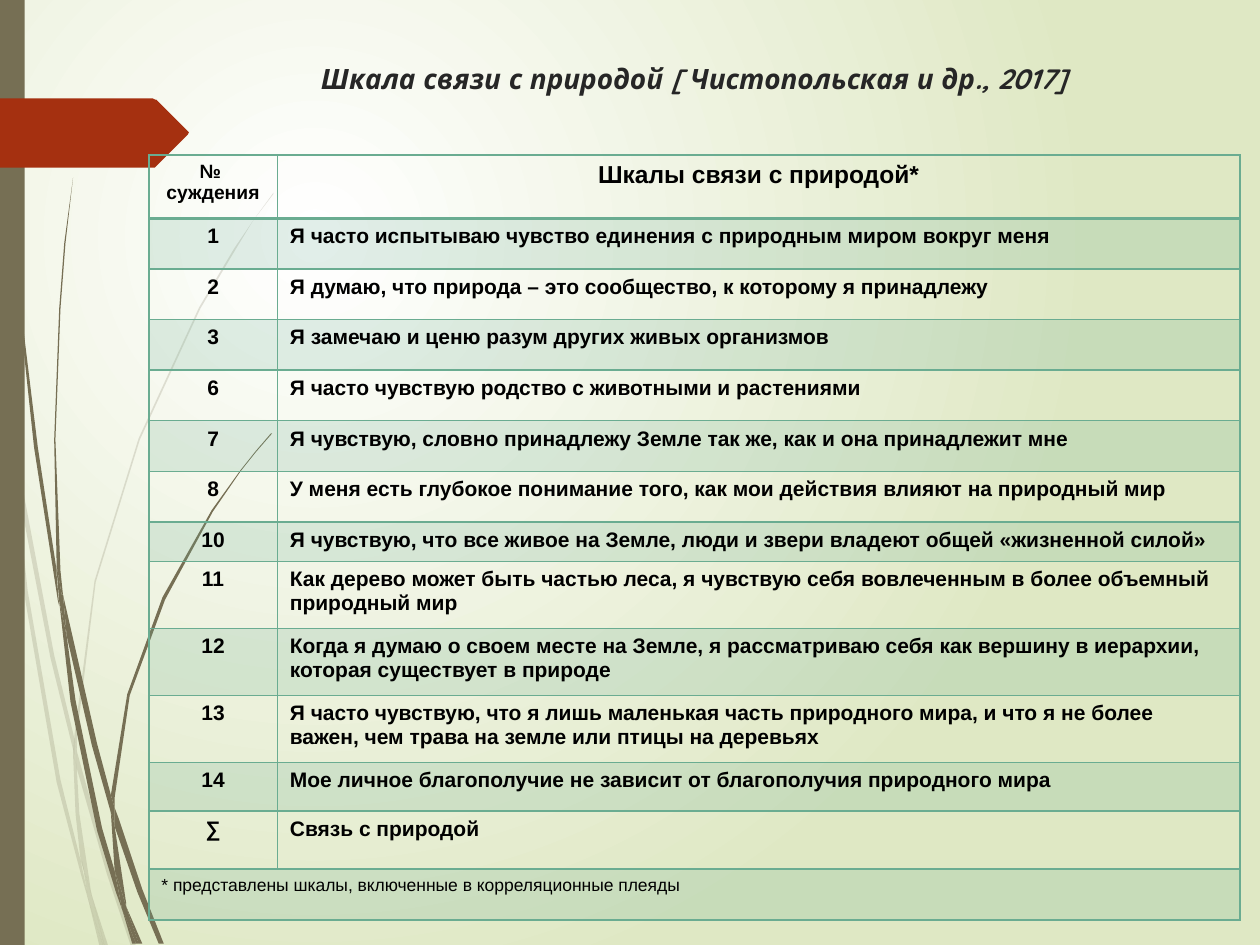
from lxml.etree import SubElement
from pptx import Presentation
from pptx.dml.color import RGBColor
from pptx.enum.shapes import MSO_SHAPE as Shape
from pptx.enum.text import MSO_ANCHOR as Anchor, PP_ALIGN as Align
from pptx.oxml.ns import qn
from pptx.util import Cm, Pt

COLORS = {"center": "FFFFFF", "edge": "DFE8C4", "stalk": "766F54", "arrow": "A53010",
          "title": "262626", "text": "000000", "table": "6AAC91"}
GRID = Cm(0.0254)  # one unit of the outline points below

# Pieces of the plant stalks, each a closed outline of (x, y) grid points
PALE_STALKS = [
    [(8, 350), (6, 322), (0, 282), (0, 299), (7, 344)],
    [(40, 522), (59, 599), (59, 586), (43, 520), (10, 345), (12, 376)],
    [(64, 607), (61, 596), (61, 610), (85, 694), (104, 751), (108, 751), (88, 692)],
    [(83, 751), (86, 751), (73, 711)],
    [(64, 683), (48, 619), (22, 469), (12, 376), (8, 350), (19, 470), (45, 621),
     (64, 693), (70, 714), (69, 707)],
    [(58, 599), (60, 646), (64, 683), (67, 692), (73, 711), (72, 706), (63, 646),
     (61, 610), (61, 608)],
    [(61, 584), (76, 462), (111, 349), (159, 245), (187, 198), (201, 175), (217, 154),
     (217, 153), (201, 175), (186, 197), (158, 244), (110, 348), (75, 461), (59, 584),
     (59, 586), (61, 596)],
    [(70, 714), (79, 751), (82, 751)],
    [(61, 608), (61, 610), (61, 596), (59, 586), (58, 599)],
    [(67, 692), (65, 683), (69, 707), (70, 714), (82, 751), (83, 751), (73, 711)],
]
DARK_STALKS = [
    [(5, 110), (14, 233), (27, 355), (46, 477), (47, 481), (45, 457), (45, 453),
     (30, 355), (15, 232), (6, 109), (4, 48), (3, 0), (2, 0), (3, 48)],
    [(73, 592), (88, 645), (88, 633), (88, 631), (77, 590), (50, 472), (53, 505)],
    [(94, 649), (91, 641), (91, 656), (109, 708), (126, 749), (130, 749), (113, 706)],
    [(91, 691), (81, 657), (60, 556), (53, 505), (47, 477), (56, 557), (77, 659),
     (92, 708), (97, 722), (96, 717)],
    [(50, 472), (48, 453), (44, 349), (48, 245), (52, 193), (58, 141), (51, 193),
     (47, 245), (43, 349), (45, 449), (49, 472)],
    [(110, 749), (113, 749), (100, 719)],
    [(47, 477), (53, 505), (50, 472), (49, 472), (45, 449), (45, 453)],
    [(91, 633), (103, 552), (131, 476), (169, 406), (191, 374), (203, 359), (216, 344),
     (215, 344), (203, 358), (191, 373), (168, 405), (129, 474), (101, 551), (88, 631),
     (91, 641)],
    [(97, 722), (105, 749), (108, 749)],
    [(88, 645), (91, 691), (96, 706), (100, 719), (100, 716), (91, 656), (90, 651)],
    [(88, 645), (90, 651), (91, 656), (91, 641), (88, 631), (88, 633)],
    [(96, 706), (91, 691), (96, 717), (97, 722), (108, 749), (110, 749), (100, 719)],
]
ARROW = [(0, 78), (121, 78), (123, 79), (124, 79), (149, 104), (150, 105), (149, 107),
         (124, 132), (123, 133), (121, 133), (0, 133)]

# Row height in cm, number, statement
ROWS = [
    (1.28, "№ \nсуждения", "Шкалы связи с природой*"),
    (1.02, "1", "Я часто испытываю чувство единения с природным миром вокруг меня"),
    (1.02, "2", "Я думаю, что природа – это сообщество, к которому я принадлежу"),
    (1.02, "3", "Я замечаю и ценю разум других живых организмов"),
    (1.02, "6", "Я часто чувствую родство с животными и растениями"),
    (1.02, "7", "Я чувствую, словно принадлежу Земле так же, как и она принадлежит мне"),
    (1.02, "8", "У меня есть глубокое понимание того, как мои действия влияют на природный мир"),
    (0.8, "10", "Я чувствую, что все живое на Земле, люди и звери владеют общей «жизненной силой»"),
    (1.35, "11", "Как дерево может быть частью леса, я чувствую себя вовлеченным в более "
                 "объемный природный мир"),
    (1.35, "12", "Когда я думаю о своем месте на Земле, я рассматриваю себя как вершину в "
                 "иерархии, которая существует в природе"),
    (1.35, "13", "Я часто чувствую, что я лишь маленькая часть природного мира, и что я не "
                 "более важен, чем трава на земле или птицы на деревьях"),
    (0.98, "14", "Мое личное благополучие не зависит от благополучия природного мира"),
    (1.17, "∑", "Связь с природой"),
    (1.03, "* представлены шкалы, включенные в корреляционные плеяды", ""),
]


def paint(shape, color, opacity=100):
    """Give a shape or cell a solid fill with the opacity in percent."""
    shape.fill.solid()
    shape.fill.fore_color.rgb = RGBColor.from_string(COLORS[color])
    if opacity < 100:
        properties = shape._tc.tcPr if hasattr(shape, "_tc") else shape._element.spPr
        rgb = properties.find(qn("a:solidFill")).find(qn("a:srgbClr"))
        SubElement(rgb, qn("a:alpha"), val=str(opacity * 1000))


def write(frame, text, color, align, **font):
    """Fill a text frame, one paragraph per line of text."""
    frame.text = text
    for paragraph in frame.paragraphs:
        paragraph.alignment = align
        for run in paragraph.runs:
            run.font.color.rgb = RGBColor.from_string(COLORS[color])
            for name, value in font.items():
                setattr(run.font, name, value)


presentation = Presentation()
presentation.slide_width, presentation.slide_height = Cm(25.4), Cm(19.05)
slide = presentation.slides.add_slide(presentation.slide_layouts[6])

# Background: radial gradient around the upper left quarter
background = slide.background.fill
background.gradient()
for stop, color in zip(background.gradient_stops, ("center", "edge")):
    stop.color.rgb = RGBColor.from_string(COLORS[color])
gradient = next(slide._element.iter(qn("a:gradFill")))
gradient.remove(gradient.find(qn("a:lin")))
circle = SubElement(gradient, qn("a:path"), path="circle")
SubElement(circle, qn("a:fillToRect"), l="50000", t="50000", r="100000", b="100000")

# Stalks, side bar and arrow
bar = slide.shapes.add_shape(Shape.RECTANGLE, 0, 0, Cm(0.5), presentation.slide_height)
paint(bar, "stalk")
decorations = [bar]
for outlines, color, opacity in ((PALE_STALKS, "stalk", 20), (DARK_STALKS, "stalk", 100),
                                 ([ARROW], "arrow", 100)):
    group = slide.shapes.add_group_shape()
    for start, *points in outlines:
        builder = group.shapes.build_freeform(*start, scale=GRID)
        builder.add_line_segments(points)
        piece = builder.convert_to_shape()
        paint(piece, color, opacity)
        decorations.append(piece)
for shape in decorations:
    shape.line.fill.background()
    shape.shadow.inherit = False

# Title
title = slide.shapes.add_textbox(Cm(4.29), Cm(1.12), Cm(19.41), Cm(1.19)).text_frame
title.word_wrap = True
title.vertical_anchor = Anchor.TOP
write(title, "Шкала связи с природой [ Чистопольская и др., 2017]", "title", Align.CENTER,
      name="Quicksand", size=Pt(16), bold=True, italic=True)

# Table
COLUMNS = (2.59, 19.41)
heights = [row[0] for row in ROWS]
table = slide.shapes.add_table(len(ROWS), 2, Cm(3), Cm(3.12),
                               Cm(sum(COLUMNS)), Cm(sum(heights))).table
table.first_row = table.horz_banding = False
for column, width in zip(table.columns, COLUMNS):
    column.width = Cm(width)
last = len(ROWS) - 1
for index, (height, *texts) in enumerate(ROWS):
    table.rows[index].height = Cm(height)
    for side, text in enumerate(texts):
        cell = table.cell(index, side)
        size = (11, 14)[side] if index == 0 else 10 if index == last else 12
        centered = index == 0 or (side == 0 and index < last)
        write(cell.text_frame, text, "text", Align.CENTER if centered else Align.LEFT,
              name="Arial", size=Pt(size), bold=index < last)
        for edge in ("lnL", "lnR", "lnT", "lnB"):
            under_header = (index, edge) in ((0, "lnB"), (1, "lnT"))
            line = SubElement(cell._tc.get_or_add_tcPr(), qn(f"a:{edge}"),
                              w=str(Pt(2 if under_header else 1)))
            SubElement(SubElement(line, qn("a:solidFill")), qn("a:srgbClr"),
                       val=COLORS["table"])
        if index % 2:
            paint(cell, "table", 20)
        else:
            cell.fill.background()
table.cell(last, 0).merge(table.cell(last, 1))

presentation.save("out.pptx")
